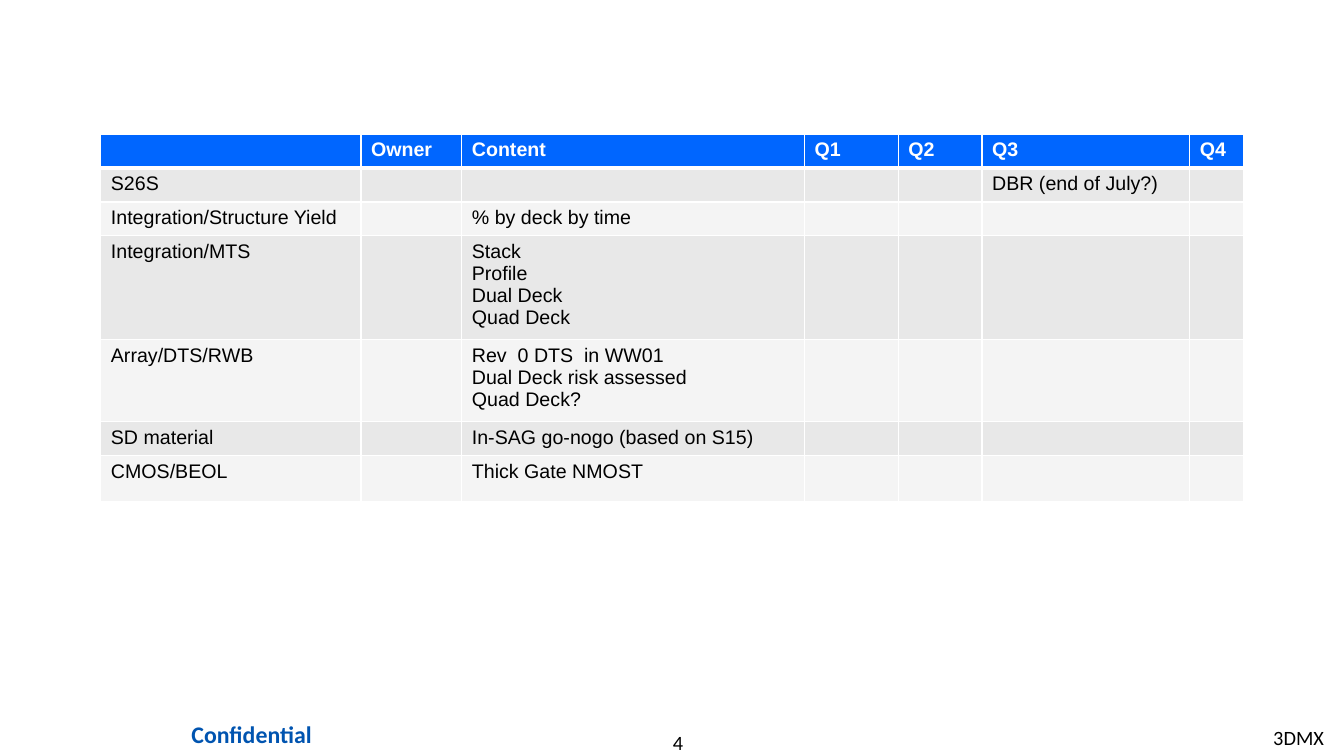
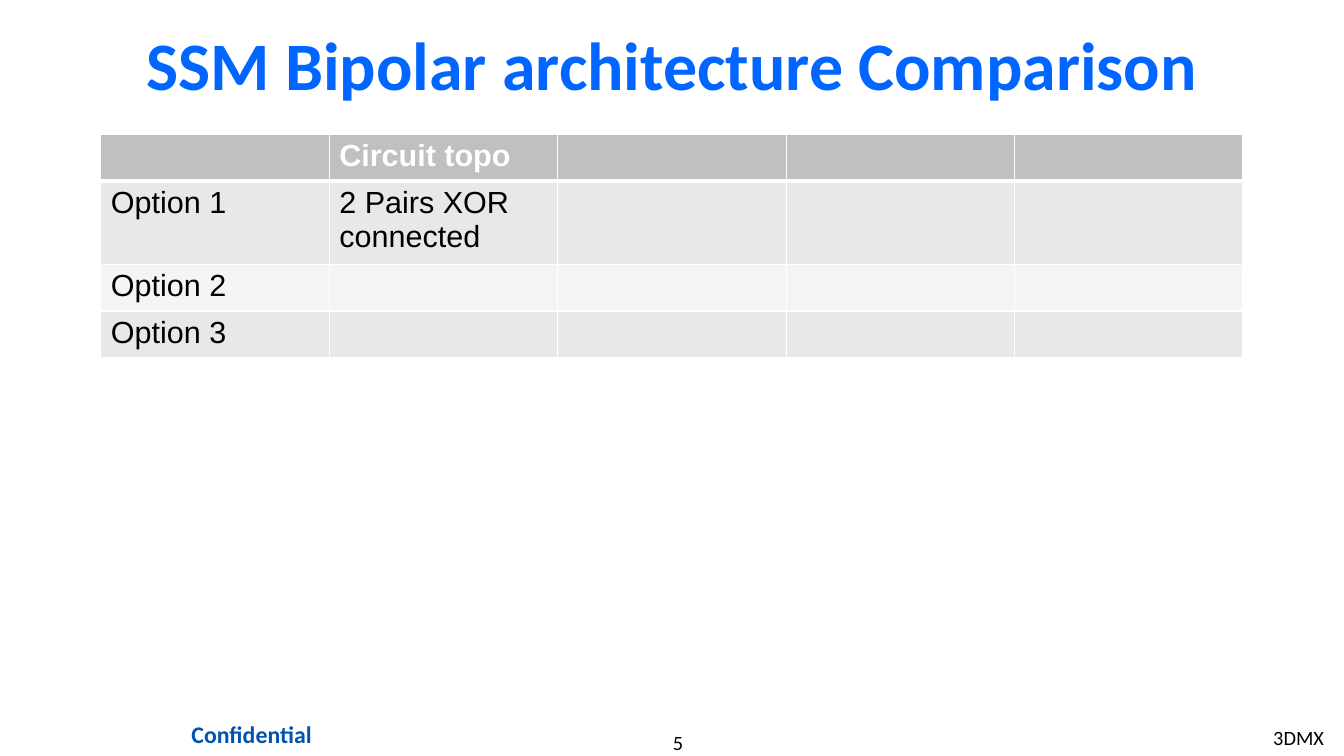
"""Build a roadmap slide and an architecture comparison slide."""

from dataclasses import dataclass

from lxml.etree import SubElement
from pptx import Presentation
from pptx.dml.color import RGBColor
from pptx.enum.text import MSO_ANCHOR, PP_ALIGN
from pptx.oxml.ns import qn
from pptx.slide import Slide
from pptx.table import _Cell
from pptx.text.text import _Paragraph
from pptx.util import Inches, Pt

BLUE = RGBColor(0x00, 0x66, 0xFF)
DARK_BLUE = RGBColor(0x00, 0x54, 0xB0)
BLACK = RGBColor(0x00, 0x00, 0x00)
WHITE = RGBColor(0xFF, 0xFF, 0xFF)
SILVER = RGBColor(0xC0, 0xC0, 0xC0)
ROW_FILLS = (RGBColor(0xE8, 0xE8, 0xE8), RGBColor(0xF4, 0xF4, 0xF4))
TABLE_LEFT, TABLE_TOP, TABLE_WIDTH = 1, 1.33, 11.33
THIN_BORDER, HEADER_BORDER = 1, 3


@dataclass(frozen=True)
class TextStyle:
    size: float
    color: RGBColor = BLACK
    bold: bool = False
    font: str = "Calibri"


@dataclass(frozen=True)
class Label:
    left: float
    top: float
    width: float
    height: float
    style: TextStyle
    alignment: PP_ALIGN = PP_ALIGN.LEFT
    anchor: MSO_ANCHOR = MSO_ANCHOR.TOP
    margin_x: float = 0.1
    margin_y: float = 0.05


@dataclass(frozen=True)
class TableContent:
    column_widths: tuple[float, ...]
    row_heights: tuple[float, ...]
    rows: tuple[dict[int, str], ...]
    header_fill: RGBColor
    text_size: float


FOOTER_STYLE = TextStyle(14.5)
TITLE = Label(1, 0.17, 11.33, 0.92, TextStyle(48.5, BLUE, True),
              PP_ALIGN.CENTER, MSO_ANCHOR.MIDDLE)
PAGE_NUMBER = Label(5.56, 7.24, 2.33, 0.24, FOOTER_STYLE, PP_ALIGN.CENTER,
                    margin_x=0, margin_y=0)
PROJECT = Label(12.53, 7.15, 0.7, 0.35, FOOTER_STYLE)
CONFIDENTIAL = Label(1.55, 7.08, 1.89, 0.41, TextStyle(17, DARK_BLUE, True),
                     PP_ALIGN.CENTER, margin_x=0.12, margin_y=0.06)

ROADMAP = TableContent(
    column_widths=(2.58, 1, 3.4, 0.93, 0.83, 2.06, 0.53),
    row_heights=(0.32, 0.34, 0.33, 1.03, 0.81, 0.33, 0.46),
    rows=(
        {1: "Owner", 2: "Content", 3: "Q1", 4: "Q2", 5: "Q3", 6: "Q4"},
        {0: "S26S", 5: "DBR (end of July?)"},
        {0: "Integration/Structure Yield", 2: "% by deck by time"},
        {0: "Integration/MTS", 2: "Stack\nProfile\nDual Deck\nQuad Deck"},
        {0: "Array/DTS/RWB",
         2: "Rev  0 DTS  in WW01\nDual Deck risk assessed\nQuad Deck?"},
        {0: "SD material", 2: "In-SAG go-nogo (based on S15)"},
        {0: "CMOS/BEOL", 2: "Thick Gate NMOST"},
    ),
    header_fill=BLUE,
    text_size=14,
)
COMPARISON = TableContent(
    column_widths=(TABLE_WIDTH / 5,) * 5,
    row_heights=(0.44, 0.78, 0.44, 0.44),
    rows=(
        {1: "Circuit topo"},
        {0: "Option 1", 1: "2 Pairs XOR connected"},
        {0: "Option 2"},
        {0: "Option 3"},
    ),
    header_fill=SILVER,
    text_size=21.8,
)


def add_run(paragraph: _Paragraph, text: str, style: TextStyle) -> None:
    run = paragraph.add_run()
    run.text = text
    run.font.name = style.font
    run.font.size = Pt(style.size)
    run.font.bold = style.bold
    run.font.color.rgb = style.color


def add_label(slide: Slide, label: Label, text: str) -> None:
    shape = slide.shapes.add_textbox(Inches(label.left), Inches(label.top),
                                     Inches(label.width), Inches(label.height))
    frame = shape.text_frame
    frame.word_wrap = True
    frame.vertical_anchor = label.anchor
    frame.margin_left = frame.margin_right = Inches(label.margin_x)
    frame.margin_top = frame.margin_bottom = Inches(label.margin_y)
    paragraph = frame.paragraphs[0]
    paragraph.alignment = label.alignment
    add_run(paragraph, text, label.style)


def set_borders(cell: _Cell, top: float, bottom: float) -> None:
    properties = cell._tc.get_or_add_tcPr()
    widths = {"lnL": THIN_BORDER, "lnR": THIN_BORDER, "lnT": top, "lnB": bottom}
    for side, width in widths.items():
        line = SubElement(properties, qn(f"a:{side}"), w=str(Pt(width)))
        fill = SubElement(line, qn("a:solidFill"))
        SubElement(fill, qn("a:srgbClr"), val=str(WHITE))


def fill_cell(cell: _Cell, text: str, style: TextStyle) -> None:
    frame = cell.text_frame
    if not text:
        SubElement(frame.paragraphs[0]._p, qn("a:endParaRPr"),
                   sz=str(round(style.size * 100)))
        return
    for index, line in enumerate(text.split("\n")):
        paragraph = frame.add_paragraph() if index else frame.paragraphs[0]
        add_run(paragraph, line, style)


def add_content_table(slide: Slide, content: TableContent) -> None:
    table = slide.shapes.add_table(
        len(content.rows), len(content.column_widths),
        Inches(TABLE_LEFT), Inches(TABLE_TOP), Inches(TABLE_WIDTH),
        Inches(sum(content.row_heights))).table
    for column, width in zip(table.columns, content.column_widths):
        column.width = Inches(width)
    for row_index, texts in enumerate(content.rows):
        row = table.rows[row_index]
        row.height = Inches(content.row_heights[row_index])
        is_header = row_index == 0
        style = TextStyle(content.text_size, WHITE if is_header else BLACK,
                          is_header, "Arial")
        color = content.header_fill if is_header else ROW_FILLS[(row_index - 1) % 2]
        top = HEADER_BORDER if row_index == 1 else THIN_BORDER
        bottom = HEADER_BORDER if is_header else THIN_BORDER
        for column_index, cell in enumerate(row.cells):
            set_borders(cell, top, bottom)
            cell.fill.solid()
            cell.fill.fore_color.rgb = color
            fill_cell(cell, texts.get(column_index, ""), style)


def add_slide(presentation: Presentation, number: int, content: TableContent,
              title: str = "") -> None:
    slide = presentation.slides.add_slide(presentation.slide_layouts[6])
    add_label(slide, PAGE_NUMBER, str(number))
    add_label(slide, PROJECT, "3DMX")
    add_label(slide, CONFIDENTIAL, "Confidential")
    if title:
        add_label(slide, TITLE, title)
    add_content_table(slide, content)


def main() -> None:
    presentation = Presentation()
    presentation.slide_width = Inches(13.33)
    presentation.slide_height = Inches(7.5)
    add_slide(presentation, 4, ROADMAP)
    add_slide(presentation, 5, COMPARISON, "SSM Bipolar architecture Comparison")
    presentation.save("out.pptx")


if __name__ == "__main__":
    main()
